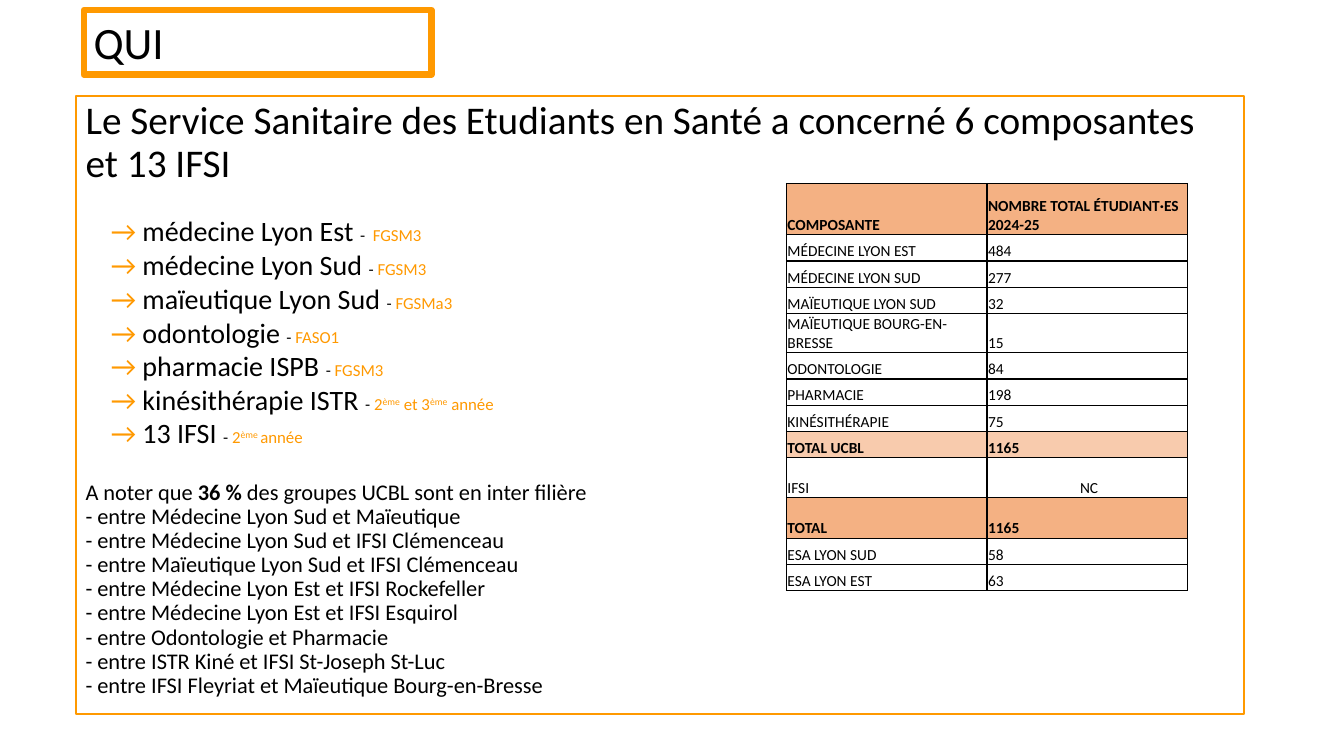
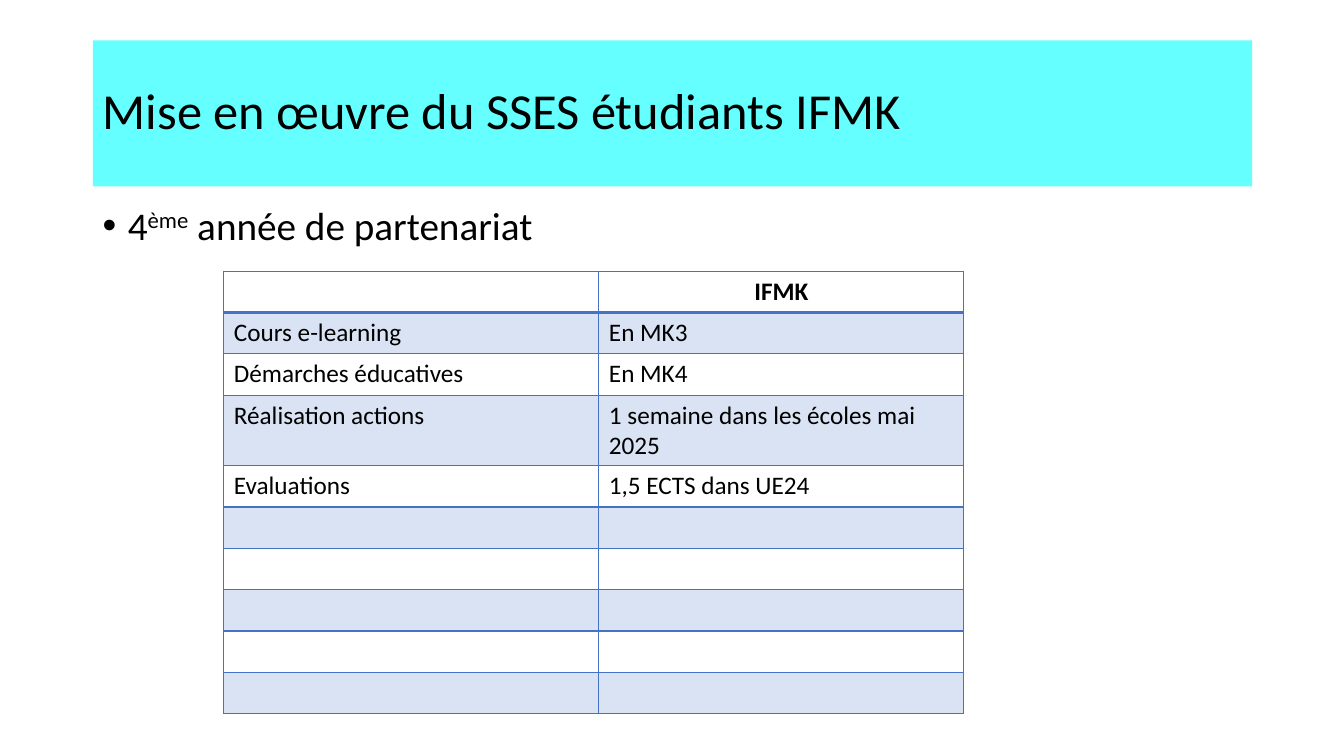
from lxml.etree import SubElement
from pptx import Presentation
from pptx.dml.color import RGBColor
from pptx.enum.shapes import MSO_SHAPE
from pptx.enum.text import MSO_ANCHOR, MSO_AUTO_SIZE, PP_ALIGN
from pptx.oxml.ns import qn
from pptx.util import Inches, Pt

FONT = "Calibri"
BLACK = RGBColor(0x00, 0x00, 0x00)
ORANGE = RGBColor(0xFF, 0x99, 0x00)
CYAN = RGBColor(0x66, 0xFF, 0xFF)
BLUE = RGBColor(0x44, 0x72, 0xC4)
PALE_BLUE = RGBColor(0xDA, 0xE3, 0xF3)
PEACH = RGBColor(0xF4, 0xB1, 0x83)
PALE_PEACH = RGBColor(0xF8, 0xCB, 0xAD)

COMPONENTS = [
    ("médecine Lyon Est", 24, "FGSM3"),
    ("médecine Lyon Sud", 12, "FGSM3"),
    ("maïeutique Lyon Sud", 12, "FGSMa3"),
    ("odontologie", 12, "FASO1"),
    ("pharmacie ISPB", 12, "FGSM3"),
    ("kinésithérapie ISTR", 12, "2^ème^ et 3^ème^ année"),
    ("13 IFSI", 12, "2^ème ^année"),
]

MIXED_GROUPS = [
    "Médecine Lyon Sud et Maïeutique",
    "Médecine Lyon Sud et IFSI Clémenceau",
    "Maïeutique Lyon Sud et IFSI Clémenceau",
    "Médecine Lyon Est et IFSI Rockefeller",
    "Médecine Lyon Est et IFSI Esquirol",
    "Odontologie et Pharmacie",
    "ISTR Kiné et IFSI St-Joseph St-Luc",
    "IFSI Fleyriat et Maïeutique Bourg-en-Bresse",
]

STUDENT_COUNTS = [
    ("COMPOSANTE", "NOMBRE TOTAL ÉTUDIANT·ES 2024-25"),
    ("MÉDECINE LYON EST", "484"),
    ("MÉDECINE LYON SUD", "277"),
    ("MAÏEUTIQUE LYON SUD", "32"),
    ("MAÏEUTIQUE BOURG-EN-BRESSE", "15"),
    ("ODONTOLOGIE", "84"),
    ("PHARMACIE", "198"),
    ("KINÉSITHÉRAPIE", "75"),
    ("TOTAL UCBL", "1165"),
    ("IFSI", " NC"),
    ("TOTAL", "1165"),
    ("ESA LYON SUD", "58"),
    ("ESA LYON EST", "63"),
]
COUNT_ROW_HEIGHTS = {0: 0.51, 4: 0.39, 9: 0.4, 10: 0.4}
COUNT_ROW_FILLS = {0: PEACH, 8: PALE_PEACH, 10: PEACH}

PARTNERSHIP = [
    ("", "IFMK"),
    ("Cours e-learning", "En MK3"),
    ("Démarches éducatives", "En MK4"),
    ("Réalisation actions", "1 semaine dans les écoles mai 2025"),
    ("Evaluations", "1,5 ECTS dans UE24"),
] + [("", "")] * 5


def style_font(font, size, color=BLACK, bold=False):
    font.name = FONT
    font.size = Pt(size)
    font.color.rgb = color
    font.bold = bold


def add_run(paragraph, text, size=None, color=None, bold=None):
    for index, piece in enumerate(text.split("^")):
        if not piece:
            continue
        run = paragraph.add_run()
        run.text = piece
        if size:
            run.font.size = Pt(size)
        if color is not None:
            run.font.color.rgb = color
        if bold:
            run.font.bold = True
        if index % 2:
            run.font._element.set("baseline", "30000")


def next_paragraph(frame):
    first = frame.paragraphs[0]
    return frame.add_paragraph() if first.runs else first


def add_text_box(slide, left, top, width, height):
    box = slide.shapes.add_textbox(
        Inches(left), Inches(top), Inches(width), Inches(height))
    box.text_frame.word_wrap = True
    return box.text_frame


def set_title(slide, text, bounds, size, anchor):
    title = slide.shapes.title
    title.left, title.top, title.width, title.height = map(Inches, bounds)
    frame = title.text_frame
    frame.auto_size = MSO_AUTO_SIZE.NONE
    frame.vertical_anchor = anchor
    paragraph = frame.paragraphs[0]
    add_run(paragraph, text)
    paragraph.alignment = PP_ALIGN.LEFT
    paragraph.line_spacing = 0.9
    style_font(paragraph.font, size)
    return title


def outline(shape, width):
    shape.line.color.rgb = ORANGE
    shape.line.width = Pt(width)


def add_label(slide, text, left, top, width, height):
    label = slide.shapes.add_shape(
        MSO_SHAPE.RECTANGLE,
        Inches(left), Inches(top), Inches(width), Inches(height))
    label.shadow.inherit = False
    label.fill.background()
    outline(label, 4.5)
    label.text_frame.vertical_anchor = MSO_ANCHOR.TOP
    paragraph = label.text_frame.paragraphs[0]
    add_run(paragraph, text)
    paragraph.alignment = PP_ALIGN.LEFT
    style_font(paragraph.font, 32)


def add_component_list(slide):
    frame = add_text_box(slide, 1, 2.01, 5.18, 2.52)
    for name, gap_size, level in COMPONENTS:
        paragraph = next_paragraph(frame)
        style_font(paragraph.font, 20)
        add_run(paragraph, "→", color=ORANGE)
        add_run(paragraph, f" {name} ")
        add_run(paragraph, "-", 12)
        add_run(paragraph, " ", gap_size)
        add_run(paragraph, level, 12, ORANGE)


def add_group_notes(slide):
    frame = add_text_box(slide, 0.75, 4.72, 6.5, 2.3)
    introduction = next_paragraph(frame)
    add_run(introduction, "A noter que ")
    add_run(introduction, "36 % ", bold=True)
    add_run(introduction, "des groupes UCBL sont en inter filière")
    for group in MIXED_GROUPS:
        add_run(next_paragraph(frame), f"- entre {group}")
    for paragraph in frame.paragraphs:
        paragraph.line_spacing = 0.9
        style_font(paragraph.font, 16)


def add_bullet(slide, text):
    paragraph = add_text_box(slide, 0.92, 2, 11.5, 0.6).paragraphs[0]
    properties = paragraph._p.get_or_add_pPr()
    properties.set("marL", str(Inches(0.25)))
    properties.set("indent", str(-Inches(0.25)))
    SubElement(properties, qn("a:buFont"), typeface="Arial")
    SubElement(properties, qn("a:buChar"), char="•")
    paragraph.line_spacing = 0.9
    add_run(paragraph, text)
    style_font(paragraph.font, 28)


def set_borders(cell, color, top=1, bottom=1):
    properties = cell._tc.get_or_add_tcPr()
    for side, width in (("L", 1), ("R", 1), ("T", top), ("B", bottom)):
        line = SubElement(properties, qn(f"a:ln{side}"), w=str(Pt(width)))
        fill = SubElement(line, qn("a:solidFill"))
        SubElement(fill, qn("a:srgbClr"), val=str(color))


def add_table(slide, rows, left, top, widths, heights):
    frame = slide.shapes.add_table(
        len(rows), len(widths), Inches(left), Inches(top),
        Inches(sum(widths)), Inches(sum(heights)))
    table = frame.table
    table.first_row = table.horz_banding = False
    for column, width in zip(table.columns, widths):
        column.width = Inches(width)
    for row, height in zip(table.rows, heights):
        row.height = Inches(height)
    return table


def fill_cell(cell, text, size, fill=None, bold=False, centered=False):
    if fill is None:
        cell.fill.background()
    else:
        cell.fill.solid()
        cell.fill.fore_color.rgb = fill
    paragraph = cell.text_frame.paragraphs[0]
    if text:
        add_run(paragraph, text)
    paragraph.alignment = PP_ALIGN.CENTER if centered else PP_ALIGN.LEFT
    style_font(paragraph.font, size, bold=bold)


def add_student_table(slide):
    heights = [COUNT_ROW_HEIGHTS.get(i, 0.26) for i in range(len(STUDENT_COUNTS))]
    table = add_table(slide, STUDENT_COUNTS, 7.8, 1.82, [1.99, 1.99], heights)
    for row_index, row in enumerate(STUDENT_COUNTS):
        fill = COUNT_ROW_FILLS.get(row_index)
        for column_index, text in enumerate(row):
            cell = table.cell(row_index, column_index)
            cell.margin_left = cell.margin_top = cell.margin_right = Inches(0.01)
            cell.margin_bottom = 0
            cell.vertical_anchor = MSO_ANCHOR.BOTTOM
            set_borders(cell, BLACK)
            fill_cell(cell, text, 11, fill, bold=fill is not None,
                      centered=text.endswith("NC"))


def add_partnership_table(slide):
    heights = [0.67 if row[0] == "Réalisation actions" else 0.41
               for row in PARTNERSHIP]
    table = add_table(slide, PARTNERSHIP, 2.22, 2.69, [3.72, 3.62], heights)
    for row_index, row in enumerate(PARTNERSHIP):
        header = row_index == 0
        for column_index, text in enumerate(row):
            cell = table.cell(row_index, column_index)
            set_borders(cell, BLUE, top=2 if row_index == 1 else 1,
                        bottom=2 if header else 1)
            fill_cell(cell, text, 18, PALE_BLUE if row_index % 2 else None,
                      bold=header, centered=header)


def build_who_slide(slide):
    title = set_title(
        slide,
        "Le Service Sanitaire des Etudiants en Santé a concerné 6 composantes et 13 IFSI",
        (0.75, 0.95, 11.59, 6.13), 28, MSO_ANCHOR.TOP)
    outline(title, 1.5)
    add_label(slide, "QUI", 0.83, 0.1, 3.45, 0.64)
    add_component_list(slide)
    add_group_notes(slide)
    add_student_table(slide)


def build_partnership_slide(slide):
    title = set_title(slide, "Mise en œuvre du SSES étudiants IFMK",
                      (0.92, 0.4, 11.5, 1.45), 36, MSO_ANCHOR.MIDDLE)
    title.fill.solid()
    title.fill.fore_color.rgb = CYAN
    add_bullet(slide, "4^ème^ année de partenariat")
    add_partnership_table(slide)


def main():
    presentation = Presentation()
    presentation.slide_width = Inches(13.33)
    presentation.slide_height = Inches(7.5)
    title_only = presentation.slide_layouts[5]
    for build in (build_who_slide, build_partnership_slide):
        build(presentation.slides.add_slide(title_only))
    presentation.save("out.pptx")


if __name__ == "__main__":
    main()
